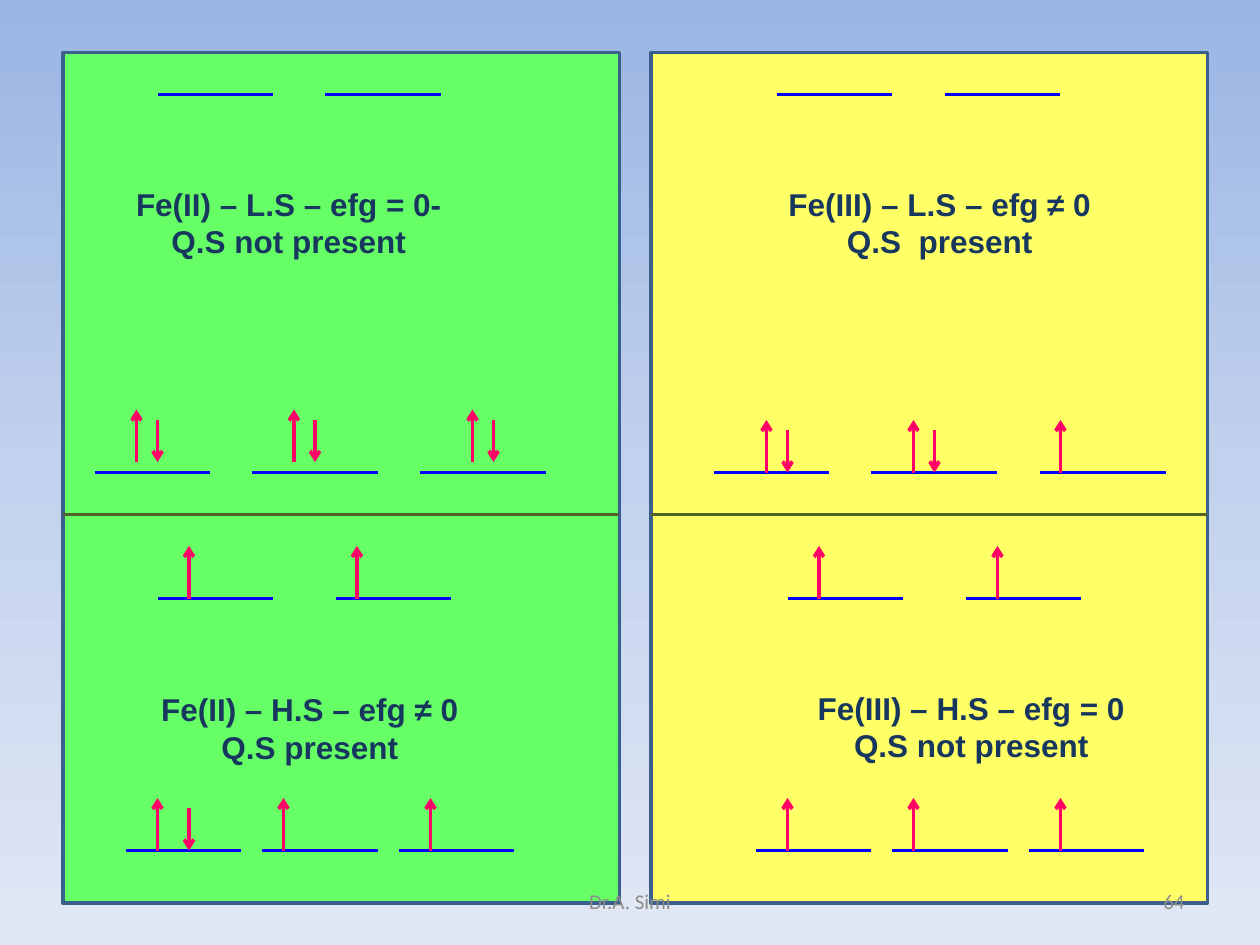
from copy import deepcopy
from dataclasses import dataclass

from lxml import etree
from pptx import Presentation
from pptx.dml.color import RGBColor
from pptx.enum.shapes import MSO_CONNECTOR, MSO_SHAPE
from pptx.enum.text import MSO_ANCHOR, MSO_AUTO_SIZE, PP_ALIGN
from pptx.oxml.ns import qn
from pptx.util import Inches, Pt

RECTANGLE = MSO_SHAPE.RECTANGLE
STRAIGHT = MSO_CONNECTOR.STRAIGHT
CENTER, RIGHT = PP_ALIGN.CENTER, PP_ALIGN.RIGHT
TOP, MIDDLE = MSO_ANCHOR.TOP, MSO_ANCHOR.MIDDLE

GREEN = RGBColor(0x66, 0xFF, 0x66)
YELLOW = RGBColor(0xFF, 0xFF, 0x66)
BORDER = RGBColor(0x3A, 0x5F, 0x8C)
LEVEL_BLUE = RGBColor(0x00, 0x00, 0xFF)
ELECTRON_PINK = RGBColor(0xFF, 0x00, 0x66)
DIVIDER_OLIVE = RGBColor(0x4F, 0x62, 0x28)
NAVY = RGBColor(0x17, 0x37, 0x5E)
GREY = RGBColor(0x8C, 0x8C, 0x8C)
SKY = [(0, RGBColor(0x9A, 0xB5, 0xE4)), (0.5, RGBColor(0xC2, 0xD1, 0xED)),
       (1, RGBColor(0xE1, 0xE8, 0xF5))]

# The slide is a grid of 120 columns and 90 rows, twelve to the inch.
PANEL_TOP, PANEL_WIDTH, PANEL_HEIGHT = 5, 53, 81
DIVIDER_ROW = 44
UP_LENGTH, DOWN_LENGTH = 5, 4
CAPTION_WIDTH, CAPTION_HEIGHT = 33, 8.5


@dataclass
class Orbitals:
    """A row of level lines as (column, width), with the columns of its spins."""
    row: float
    levels: list
    up: tuple = ()
    down: tuple = ()
    lift: float = 0


@dataclass
class SpinState:
    caption: list
    column: float
    row: float
    orbitals: list


def grid(cells):
    return Inches(cells / 12)


def add_background(slide):
    fill = slide.background.fill
    fill.gradient()
    fill.gradient_angle = 270
    stop_list = next(slide.element.iter(qn("a:gsLst")))
    stop_list.insert(1, deepcopy(stop_list[0]))
    for stop, (position, color) in zip(fill.gradient_stops, SKY):
        stop.position = position
        stop.color.rgb = color


def add_line(slide, start, end, color, arrow=False):
    line = slide.shapes.add_connector(STRAIGHT, *map(grid, start + end))
    line.line.color.rgb = color
    line.line.width = Pt(2)
    if arrow:
        etree.SubElement(line.line._get_or_add_ln(), qn("a:tailEnd"), type="arrow")
    etree.SubElement(line._element.spPr, qn("a:effectLst"))


def add_text(slide, box, lines, size=18, font="Arial", color=NAVY, bold=False,
             align=CENTER, anchor=TOP, grow=False):
    shape = slide.shapes.add_textbox(*map(grid, box))
    frame = shape.text_frame
    frame.word_wrap = True
    frame.vertical_anchor = anchor
    if grow:
        frame.auto_size = MSO_AUTO_SIZE.SHAPE_TO_FIT_TEXT
    frame.text = "\n".join(lines)
    for paragraph in frame.paragraphs:
        paragraph.alignment = align
        paragraph.font.size = Pt(size)
        paragraph.font.name = font
        paragraph.font.bold = bold
        paragraph.font.color.rgb = color


def add_orbitals(slide, left, top, orbitals):
    row = top + orbitals.row
    for column, width in orbitals.levels:
        add_line(slide, (left + column, row), (left + column + width, row), LEVEL_BLUE)
    foot = row - orbitals.lift
    for column in orbitals.up:
        x = left + column
        add_line(slide, (x, foot), (x, foot - UP_LENGTH), ELECTRON_PINK, arrow=True)
    for column in orbitals.down:
        x = left + column
        add_line(slide, (x, foot - DOWN_LENGTH), (x, foot), ELECTRON_PINK, arrow=True)


def add_panel(slide, left, top, color, states):
    """Draw one iron ion: low spin above the divider, high spin below it."""
    panel = slide.shapes.add_shape(
        RECTANGLE, *map(grid, (left, top, PANEL_WIDTH, PANEL_HEIGHT)))
    panel.shadow.inherit = False
    panel.fill.solid()
    panel.fill.fore_color.rgb = color
    panel.line.color.rgb = BORDER
    panel.line.width = Pt(2)
    for state in states:
        for orbitals in state.orbitals:
            add_orbitals(slide, left, top, orbitals)
        box = (left + state.column, top + state.row, CAPTION_WIDTH, CAPTION_HEIGHT)
        add_text(slide, box, state.caption, bold=True, grow=True)
    divider = top + DIVIDER_ROW
    add_line(slide, (left, divider), (left + PANEL_WIDTH, divider), DIVIDER_OLIVE)


def add_footer(slide, top, height):
    style = {"size": 12, "font": "Calibri", "color": GREY, "anchor": MIDDLE}
    add_text(slide, (86, top, 28, height), ["64"], align=RIGHT, **style)
    add_text(slide, (41, top, 38, height), ["Dr.A. Simi"], **style)


IRON_TWO = [
    SpinState(["Fe(II) – L.S – efg = 0- Q.S not present"], 5, 12, [
        Orbitals(4, [(9, 11), (25, 11)]),
        Orbitals(40, [(3, 11), (18, 12), (34, 12)], (7, 22, 39), (9, 24, 41), lift=1),
    ]),
    SpinState(["Fe(II) – H.S – efg ≠ 0", "Q.S present"], 7, 60.1, [
        Orbitals(52, [(9, 11), (26, 11)], (12, 28)),
        Orbitals(76, [(6, 11), (19, 11), (32, 11)], (9, 21, 35), (12,)),
    ]),
]
IRON_THREE = [
    SpinState(["Fe(III) – L.S – efg ≠ 0", "Q.S  present"], 11, 12, [
        Orbitals(4, [(12, 11), (28, 11)]),
        Orbitals(40, [(6, 11), (21, 12), (37, 12)], (11, 25, 39), (13, 27)),
    ]),
    SpinState(["Fe(III) – H.S – efg = 0", "Q.S not present"], 14, 60, [
        Orbitals(52, [(13, 11), (30, 11)], (16, 33)),
        Orbitals(76, [(10, 11), (23, 11), (36, 11)], (13, 25, 39)),
    ]),
]


def main():
    presentation = Presentation()
    presentation.slide_width = grid(120)
    presentation.slide_height = grid(90)
    slide = presentation.slides.add_slide(presentation.slide_layouts[6])
    add_background(slide)
    add_panel(slide, 6, PANEL_TOP, GREEN, IRON_TWO)
    add_panel(slide, 62, PANEL_TOP, YELLOW, IRON_THREE)
    add_footer(slide, 83.4, 4.8)
    presentation.save("out.pptx")


if __name__ == "__main__":
    main()
